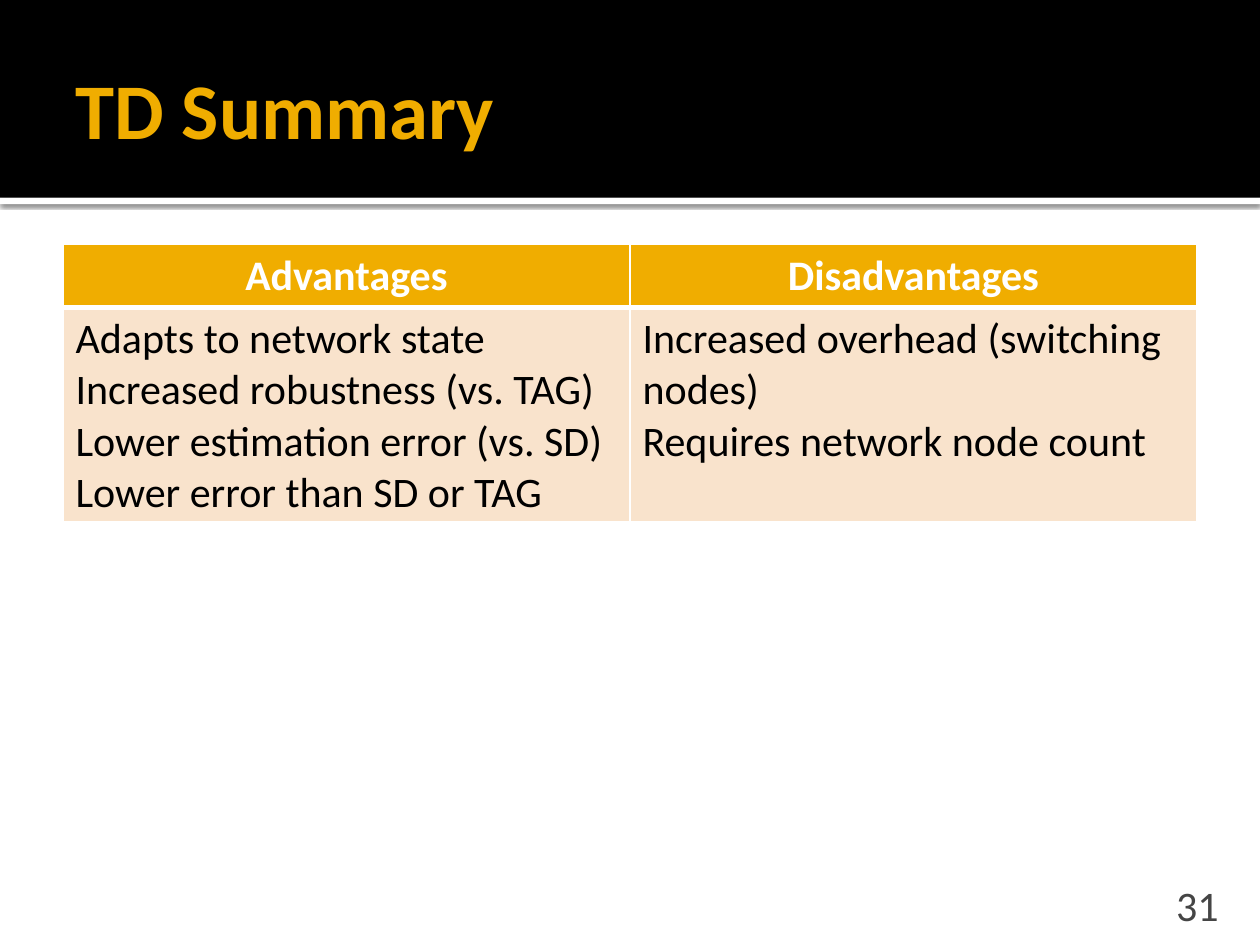
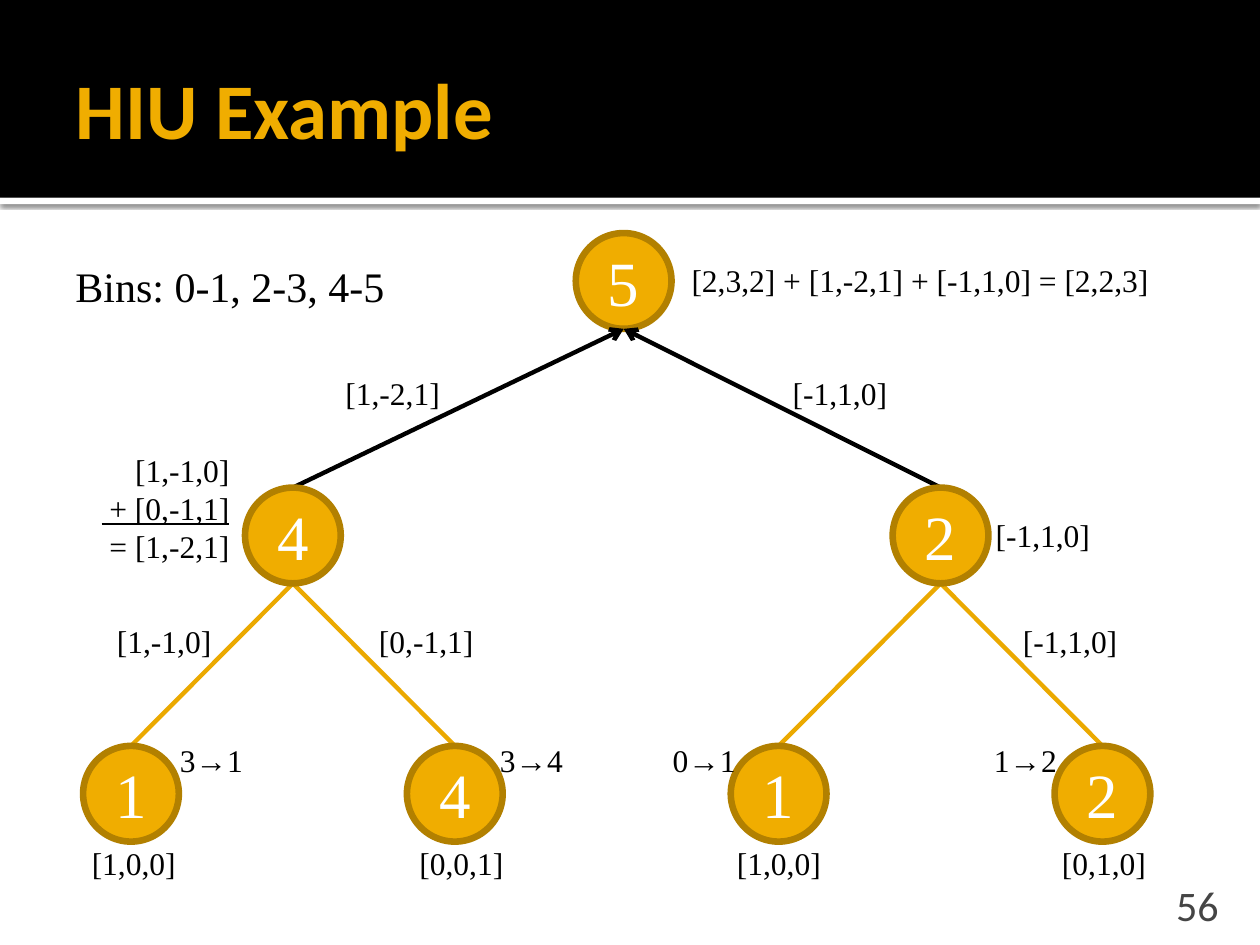
from dataclasses import dataclass

from lxml.etree import SubElement
from pptx import Presentation
from pptx.dml.color import RGBColor
from pptx.enum.shapes import MSO_CONNECTOR, MSO_SHAPE
from pptx.enum.text import MSO_ANCHOR, MSO_AUTO_SIZE, PP_ALIGN
from pptx.oxml import parse_xml
from pptx.oxml.ns import nsdecls, qn
from pptx.util import Inches, Pt

HUES = {
    "black": "000000",
    "white": "FFFFFF",
    "gold": "F0AD00",
    "edge": "EBA900",
    "rim": "B28000",
    "cream": "F9E3CC",
    "gray": "454545",
}
SANS, SERIF = "Calibri", "Times New Roman"
LEFT, MID, RIGHT = PP_ALIGN.LEFT, PP_ALIGN.CENTER, PP_ALIGN.RIGHT
SIZE = 0.76
TOPS = (1.85, 3.87, 5.92)
LEAFS = [1.04 + 2.57 * i for i in range(4)]
PAIRS = {
    "Advantages": [
        "Adapts to network state",
        "Increased robustness (vs. TAG)",
        "Lower estimation error (vs. SD)",
        "Lower error than SD or TAG",
    ],
    "Disadvantages": [
        "Increased overhead (switching nodes)",
        "Requires network node count",
    ],
}


@dataclass
class Node:
    """A numbered circle of the tree, placed by its centre and level."""
    name: str
    x: float
    level: int


@dataclass
class Label:
    """A line or stack of text beside the tree."""
    lines: list[str]
    x: float
    y: float
    w: float
    h: float = 0.4
    align: PP_ALIGN = LEFT
    size: int = 18


ROOT = Node("5", 4.95, 0)
MIDS = [Node(name, sum(LEAFS[2 * i:2 * i + 2]) / 2, 1) for i, name in enumerate("42")]
ENDS = [Node(name, x, 2) for name, x in zip("1412", LEAFS)]
LABELS = [
    Label(["Bins: 0-1, 2-3, 4-5"], 0.5, 2.02, 2.68, 0.5, size=24),
    Label(["[2,3,2] + [1,-2,1] + [-1,1,0] = [2,2,3]"], 5.39, 2.02, 3.87),
    Label(["[1,-1,0]", " + [0,-1,1]", "= [1,-2,1]"], 0.63, 3.53, 1.29, 1.01, RIGHT),
    Label(["[-1,1,0]"], 7.79, 4.05, 0.96, align=RIGHT),
    *[Label([text], x, 2.92, 0.96, align=RIGHT)
      for text, x in (("[1,-2,1]", 2.63), ("[-1,1,0]", 6.18))],
    *[Label([text], x, 4.89, 0.96)
      for text, x in (("[1,-1,0]", 0.83), ("[0,-1,1]", 2.91), ("[-1,1,0]", 8.02))],
    *[Label([text], x, 5.83, 0.7)
      for text, x in (("3→1", 1.33), ("3→4", 3.87), ("0→1", 5.24), ("1→2", 7.79))],
    *[Label([text], x, 6.65, 0.88)
      for text, x in (("[1,0,0]", 0.63), ("[0,0,1]", 3.23),
                      ("[1,0,0]", 5.75), ("[0,1,0]", 8.33))],
]


def hue(name: str) -> RGBColor:
    """Look up a colour by name."""
    return RGBColor.from_string(HUES[name])


def write(frame, lines: list[str], size: int, font: str, color: str,
          align: PP_ALIGN = LEFT, bold: bool = False) -> None:
    """Fill a text frame with evenly styled paragraphs."""
    frame.text = "\n".join(lines)
    for para in frame.paragraphs:
        para.alignment = align
        para.font.size = Pt(size)
        para.font.name = font
        para.font.bold = bold
        para.font.color.rgb = hue(color)


def add_band(slide, top: float, height: float, color: str):
    """Add a full-width band to the layout of a slide."""
    band = slide.shapes.add_shape(MSO_SHAPE.RECTANGLE, 0, Inches(top), Inches(10), Inches(height))
    band.shadow.inherit = False
    band.fill.solid()
    band.fill.fore_color.rgb = hue(color)
    band.line.fill.background()
    slide.slide_layout.shapes._spTree.insert(2, band._element)
    return band


def add_bands(slide) -> None:
    """Set the shared header bands, the white one with a soft shadow."""
    add_band(slide, 0, 1.57, "black")
    strip = add_band(slide, 1.57, 0.05, "white")
    glow = strip._element.spPr.find(qn("a:effectLst"))
    glow.append(parse_xml(
        f'<a:outerShdw {nsdecls("a")} blurRad="{Pt(2.5)}" dist="{Pt(0.8)}" dir="5400000" '
        f'rotWithShape="0"><a:srgbClr val="{HUES["black"]}"><a:alpha val="60000"/>'
        '</a:srgbClr></a:outerShdw>'))


def add_page(deck, title: str, number: int):
    """Add a slide with its title and page number."""
    slide = deck.slides.add_slide(deck.slide_layouts[5])
    head = slide.shapes.title
    head.left, head.top, head.width, head.height = map(Inches, (0.5, 0.17, 9, 1.37))
    frame = head.text_frame
    frame.auto_size = MSO_AUTO_SIZE.NONE
    frame.vertical_anchor = MSO_ANCHOR.MIDDLE
    frame.margin_right = Inches(0.05)
    write(frame, [title], 45, SANS, "gold", bold=True)
    foot = slide.shapes.add_textbox(*map(Inches, (8.97, 7.08, 0.8, 0.3))).text_frame
    foot.word_wrap = True
    foot.vertical_anchor = MSO_ANCHOR.BOTTOM
    foot.margin_bottom = 0
    write(foot, [str(number)], 24, SANS, "gray", RIGHT)
    return slide


def paint(cell, color: str, base: float) -> None:
    """Fill a cell and give it white borders."""
    cell.fill.solid()
    cell.fill.fore_color.rgb = hue(color)
    rims = zip(("lnL", "lnR", "lnT", "lnB"), (1, 1, base if color == "cream" else 1, base))
    for spot, (tag, width) in enumerate(rims):
        cell._tc.get_or_add_tcPr().insert(spot, parse_xml(
            f'<a:{tag} {nsdecls("a")} w="{Pt(width)}"><a:solidFill>'
            f'<a:srgbClr val="{HUES["white"]}"/></a:solidFill></a:{tag}>'))


def add_grid(slide) -> None:
    """Add the table of advantages and disadvantages."""
    grid = slide.shapes.add_table(2, 2, *map(Inches, (0.5, 1.94, 9, 2.2))).table
    grid.rows[0].height, grid.rows[1].height = Inches(0.5), Inches(1.7)
    for col, (head, lines) in enumerate(PAIRS.items()):
        top, body = grid.cell(0, col), grid.cell(1, col)
        write(top.text_frame, [head], 24, SANS, "white", MID, True)
        write(body.text_frame, lines, 24, SANS, "black")
        paint(top, "gold", 3)
        paint(body, "cream", 1)
    for col in range(2):
        rim = grid.cell(1, col)._tc.tcPr.find(qn("a:lnT"))
        rim.set("w", str(Pt(3)))


def add_node(slide, node: Node) -> None:
    """Draw a numbered circle."""
    disc = slide.shapes.add_shape(
        MSO_SHAPE.OVAL, Inches(node.x - SIZE / 2), Inches(TOPS[node.level]),
        Inches(SIZE), Inches(SIZE))
    disc.shadow.inherit = False
    disc.fill.solid()
    disc.fill.fore_color.rgb = hue("gold")
    disc.line.color.rgb = hue("rim")
    disc.line.width = Pt(3.78)
    disc.text_frame.vertical_anchor = MSO_ANCHOR.MIDDLE
    write(disc.text_frame, [node.name], 36, SERIF, "white", MID)


def add_edge(slide, child: Node, parent: Node, color: str, arrow: bool = False) -> None:
    """Join a child to its parent, with an arrow if asked."""
    edge = slide.shapes.add_connector(
        MSO_CONNECTOR.STRAIGHT, Inches(child.x), Inches(TOPS[child.level]),
        Inches(parent.x), Inches(TOPS[parent.level] + SIZE))
    edge.line.color.rgb = hue(color)
    edge.line.width = Pt(2.5)
    if arrow:
        SubElement(edge.line._get_or_add_ln(), qn("a:tailEnd"), type="arrow")
    SubElement(edge._element.spPr, qn("a:effectLst"))


def add_label(slide, label: Label) -> None:
    """Add a text label, underlining the last addend of a sum."""
    frame = slide.shapes.add_textbox(
        *map(Inches, (label.x, label.y, label.w, label.h))).text_frame
    frame.word_wrap = False
    write(frame, label.lines, label.size, SERIF, "black", label.align)
    if len(label.lines) > 1:
        frame.paragraphs[-2].font.underline = True


def add_tree(slide) -> None:
    """Draw the tree with its labels."""
    for i, leaf in enumerate(ENDS):
        add_edge(slide, leaf, MIDS[i // 2], "edge")
    add_node(slide, ROOT)
    for node in MIDS:
        add_edge(slide, node, ROOT, "black", True)
    for node in MIDS + ENDS:
        add_node(slide, node)
    for label in LABELS:
        add_label(slide, label)


def main() -> None:
    """Build and save the deck."""
    deck = Presentation()
    deck.slide_width, deck.slide_height = Inches(10), Inches(7.5)
    first = add_page(deck, "TD Summary", 31)
    add_bands(first)
    add_grid(first)
    add_tree(add_page(deck, "HIU Example", 56))
    deck.save("out.pptx")


if __name__ == "__main__":
    main()
